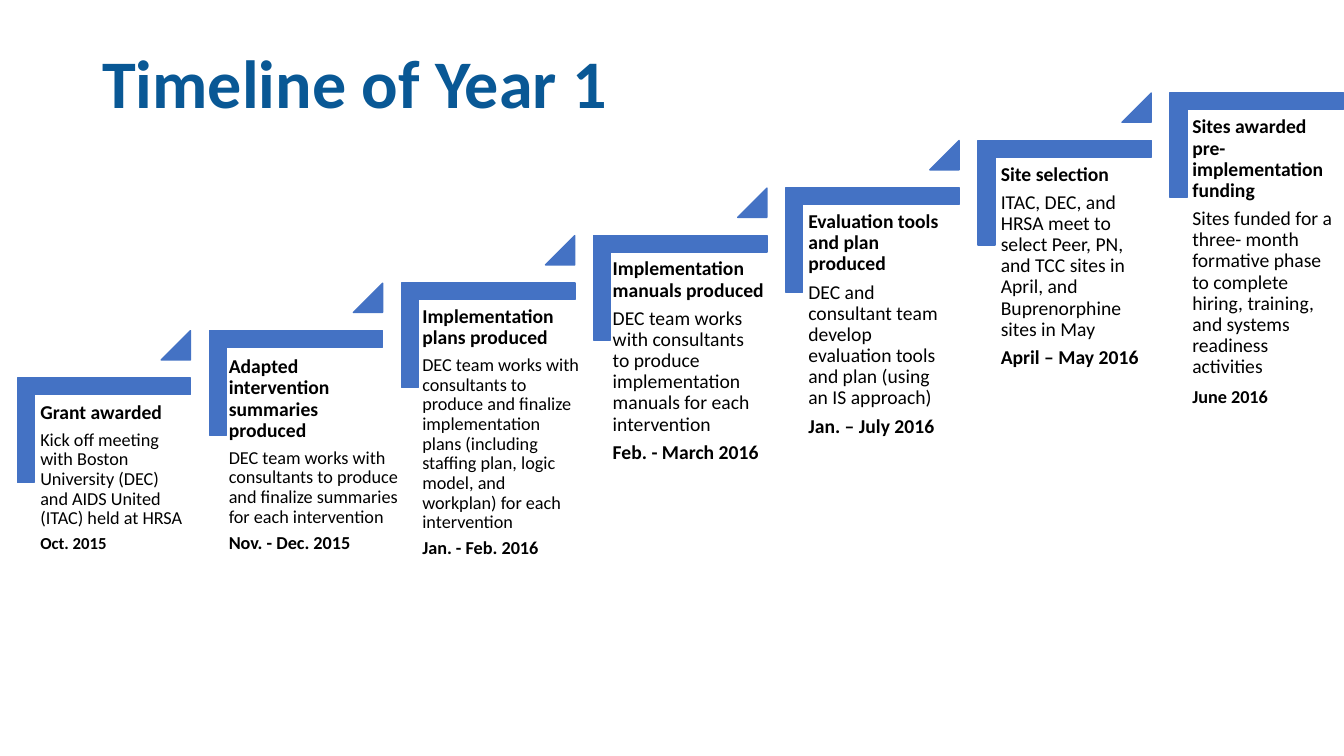
from pptx import Presentation
from pptx.dml.color import RGBColor
from pptx.enum.shapes import MSO_SHAPE
from pptx.enum.text import MSO_ANCHOR
from pptx.util import Pt

BLUE = "4472C4"
STEP_X, STEP_Y = 137.25, 33.95
CORNER_LEFT, CORNER_TOP = 36.75, 245.5
CORNER_WIDTH, CORNER_HEIGHT = 74.9, 123.8
TRIANGLE = 20.9


def color(value):
    return RGBColor.from_string(value)


def add_blue_shape(kind, left, top, width, height, adjustments):
    shape = page.shapes.add_shape(kind, Pt(left), Pt(top), Pt(width), Pt(height))
    shape.shadow.inherit = False
    shape.fill.solid()
    shape.fill.fore_color.rgb = color(BLUE)
    shape.line.color.rgb = color(BLUE)
    shape.line.width = Pt(1)
    for index, value in enumerate(adjustments):
        shape.adjustments[index] = value
    return shape


deck = Presentation()
deck.slide_width, deck.slide_height = Pt(960), Pt(540)
page = deck.slides.add_slide(deck.slide_layouts[6])

title = page.shapes.add_textbox(Pt(66), Pt(28.8), Pt(828), Pt(65.5))
title.text_frame.word_wrap = True
title.text_frame.vertical_anchor = MSO_ANCHOR.MIDDLE
para = title.text_frame.paragraphs[0]
para.line_spacing = 0.9
span = para.add_run()
span.text = "Timeline of Year 1"
span.font.name = "Calibri"
span.font.size = Pt(48.6)
span.font.bold = True
span.font.color.rgb = color("095895")

# left, top, width, inset, body size, date size, heading, body, date
milestones = [
    (24.5, 283, 112.3, 4.3, 13, 12, "Grant awarded",
     "Kick off meeting with Boston University (DEC) and AIDS United (ITAC) held at HRSA",
     "Oct. 2015"),
    (159.1, 250.6, 130.3, 4.3, 13, 13, "Adapted intervention summaries produced",
     "DEC team works with consultants to produce and finalize summaries for each intervention",
     "Nov. - Dec. 2015"),
    (301.7, 218.9, 112.6, 0, 13, 13, "Implementation plans produced",
     "DEC team works with consultants to produce and finalize implementation plans "
     "(including staffing plan, logic model, and workplan) for each intervention",
     "Jan. - Feb. 2016"),
    (433.4, 180.7, 117.4, 4.3, 14, 14, "Implementation manuals produced",
     "DEC team works with consultants to produce implementation manuals for each intervention",
     "Feb. - March 2016"),
    (573.1, 146.9, 112.3, 4.3, 14, 14, "Evaluation tools and plan produced",
     "DEC and consultant team develop evaluation tools and plan (using an IS approach)",
     "Jan. – July 2016"),
    (710.6, 113, 112.3, 4.3, 14, 14, "Site selection",
     "ITAC, DEC, and HRSA meet to select Peer, PN, and TCC sites in April, "
     "and Buprenorphine sites in May",
     "April – May 2016"),
    (847.4, 79.2, 112.3, 4.3, 14, 13, "Sites awarded pre-implementation funding",
     "Sites funded for a three- month formative phase to complete hiring, training, "
     "and systems readiness activities",
     "June 2016"),
]

for number, milestone in enumerate(milestones):
    left, top, width, inset, body_size, date_size, heading, body, date = milestone
    corner_left = CORNER_LEFT + number * STEP_X
    corner_top = CORNER_TOP - number * STEP_Y
    corner = add_blue_shape(MSO_SHAPE.CORNER, corner_left, corner_top,
                            CORNER_WIDTH, CORNER_HEIGHT, [0.161, 0.161])
    corner.rotation = 90

    box = page.shapes.add_textbox(Pt(left), Pt(top), Pt(width), Pt(97.9))
    frame = box.text_frame
    frame.word_wrap = True
    frame.margin_left = frame.margin_right = Pt(inset)
    frame.margin_top = frame.margin_bottom = Pt(inset)
    lines = [(heading, 14, True), (body, body_size, False), (date, date_size, True)]
    for index, (words, size, bold) in enumerate(lines):
        para = frame.add_paragraph() if index else frame.paragraphs[0]
        para.line_spacing = 1.0 if date == "June 2016" and words == date else 0.9
        para.space_after = Pt(round(size * 0.35, 1))
        span = para.add_run()
        span.text = words
        span.font.name = "Calibri"
        span.font.size = Pt(size)
        span.font.bold = bold
        span.font.color.rgb = color("000000")

    if number < len(milestones) - 1:
        add_blue_shape(MSO_SHAPE.ISOSCELES_TRIANGLE, corner_left + 78.4,
                       corner_top - 9.3, TRIANGLE, TRIANGLE, [1])

deck.save("out.pptx")
